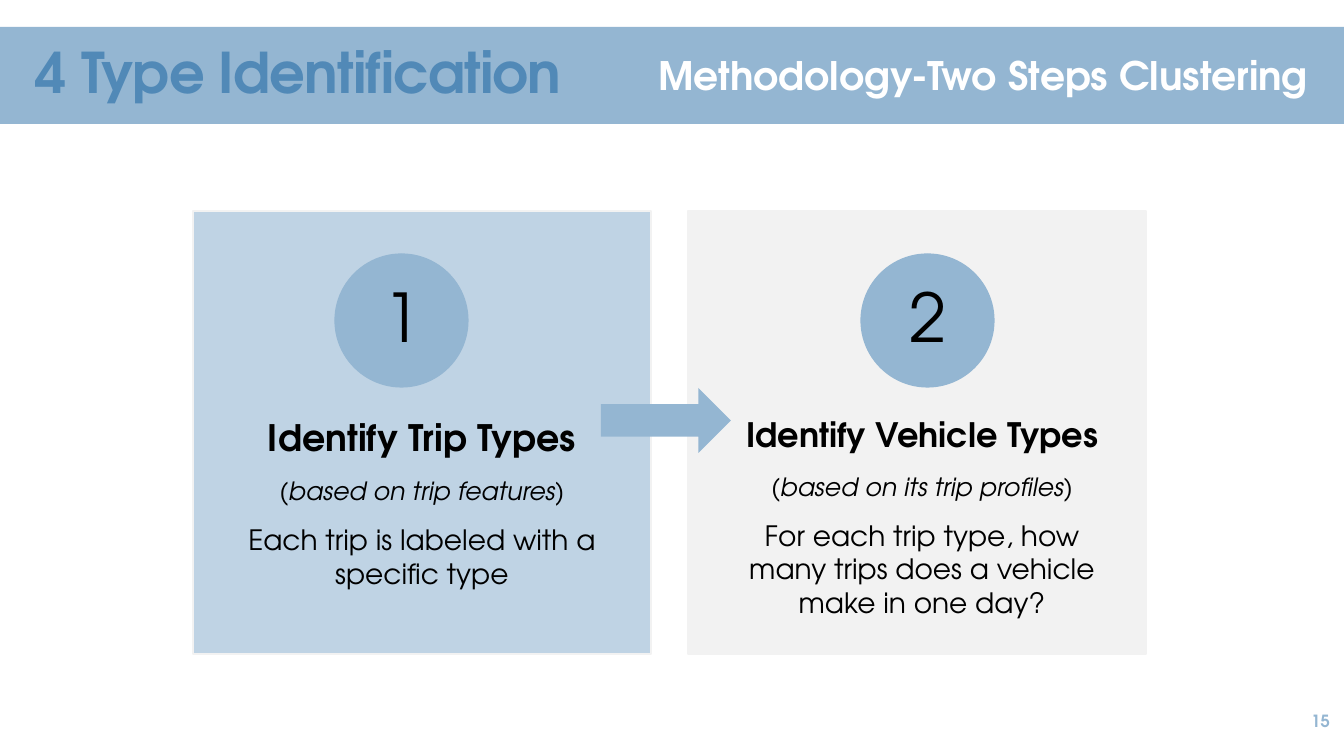
from pptx import Presentation
from pptx.dml.color import RGBColor
from pptx.enum.shapes import MSO_SHAPE
from pptx.enum.text import MSO_ANCHOR, PP_ALIGN
from pptx.util import Pt

RECT, OVAL, ARROW = MSO_SHAPE.RECTANGLE, MSO_SHAPE.OVAL, MSO_SHAPE.RIGHT_ARROW
TOP, MIDDLE = MSO_ANCHOR.TOP, MSO_ANCHOR.MIDDLE
LEFT, CENTER, RIGHT = PP_ALIGN.LEFT, PP_ALIGN.CENTER, PP_ALIGN.RIGHT

BLUE = RGBColor(0x94, 0xB6, 0xD2)
DEEP_BLUE = RGBColor(0x51, 0x89, 0xB7)
PALE_BLUE = RGBColor(0xBF, 0xD3, 0xE4)
GRAY = RGBColor(0xF2, 0xF2, 0xF2)
WHITE = RGBColor(0xFF, 0xFF, 0xFF)
BLACK = RGBColor(0x00, 0x00, 0x00)

WIDTH, HEIGHT = 1344, 756
EMU_PER_PX = 12192000 / WIDTH


def px(n):
    return round(n * EMU_PER_PX)


class Deck:
    font = "TeX Gyre Adventor"

    def __init__(self):
        self.prs = Presentation()
        self.prs.slide_width, self.prs.slide_height = px(WIDTH), px(HEIGHT)
        self.slide = self.prs.slides.add_slide(self.prs.slide_layouts[6])

    def shape(self, kind, box, fill, line=None):
        sp = self.slide.shapes.add_shape(kind, *map(px, box))
        sp.shadow.inherit = False
        sp.fill.solid()
        sp.fill.fore_color.rgb = fill
        if line is None:
            sp.line.fill.background()
        else:
            sp.line.color.rgb = line
            sp.line.width = Pt(0.85)

    def text(self, box, lines, color=BLACK, align=LEFT, anchor=MIDDLE,
             inset=(10, 5), wrap=True, leading=None, after=0, spacing=None):
        tf = self.slide.shapes.add_textbox(*map(px, box)).text_frame
        tf.word_wrap = wrap
        tf.vertical_anchor = anchor
        tf.margin_left = tf.margin_right = px(inset[0])
        tf.margin_top = tf.margin_bottom = px(inset[1])
        tf.text = "\n".join(line[0] for line in lines)
        for p, (_, size, bold, italic) in zip(tf.paragraphs, lines):
            p.alignment = align
            p.space_after = Pt(after)
            if leading:
                p.line_spacing = leading
            r = p.runs[0]
            r.font.name = self.font
            r.font.size = Pt(size)
            r.font.bold, r.font.italic = bold, italic
            r.font.color.rgb = color
            if spacing:
                r.font._element.set("spc", str(spacing))

    def card(self, left, fill, number, circle_left, text_box, heading_size, lines):
        heading, basis, detail = lines
        self.shape(RECT, (left, 211, 458, 443), fill, GRAY)
        self.text((*text_box, 458, 266),
                  [(heading, heading_size, True, False),
                   (basis, 18, False, True),
                   (detail, 20, False, False)],
                  align=CENTER, anchor=TOP, inset=(30, 36), after=12)
        self.shape(OVAL, (circle_left, 254, 133, 133), BLUE, BLUE)
        self.text((circle_left + 20, 274, 94, 94), [(number, 48, False, False)],
                  align=CENTER, inset=(10, 1), leading=0.9)


def main():
    deck = Deck()
    deck.shape(RECT, (0, 27, WIDTH, 97), BLUE)
    deck.text((26, 12, 748, 127), [("4 Type Identification", 40, True, False)],
              DEEP_BLUE, leading=0.9, spacing=-60)
    deck.text((648, 46, 682, 57), [("Methodology-Two Steps Clustering", 28, True, False)],
              WHITE, anchor=TOP, wrap=False)
    deck.card(193, PALE_BLUE, "1", 335, (193, 379), 26,
              ("Identify Trip Types", "(based on trip features)",
               "Each trip is labeled with a specific type"))
    deck.card(688, GRAY, "2", 861, (693, 378), 24,
              ("Identify Vehicle Types", "(based on its trip profiles)",
               "For each trip type, how many trips does a vehicle make in one day?"))
    deck.shape(ARROW, (601, 388, 130, 65), BLUE)
    deck.text((1172, 701, 168, 40), [("15", 12, True, False)], BLUE, align=RIGHT)
    deck.prs.save("out.pptx")


if __name__ == "__main__":
    main()
